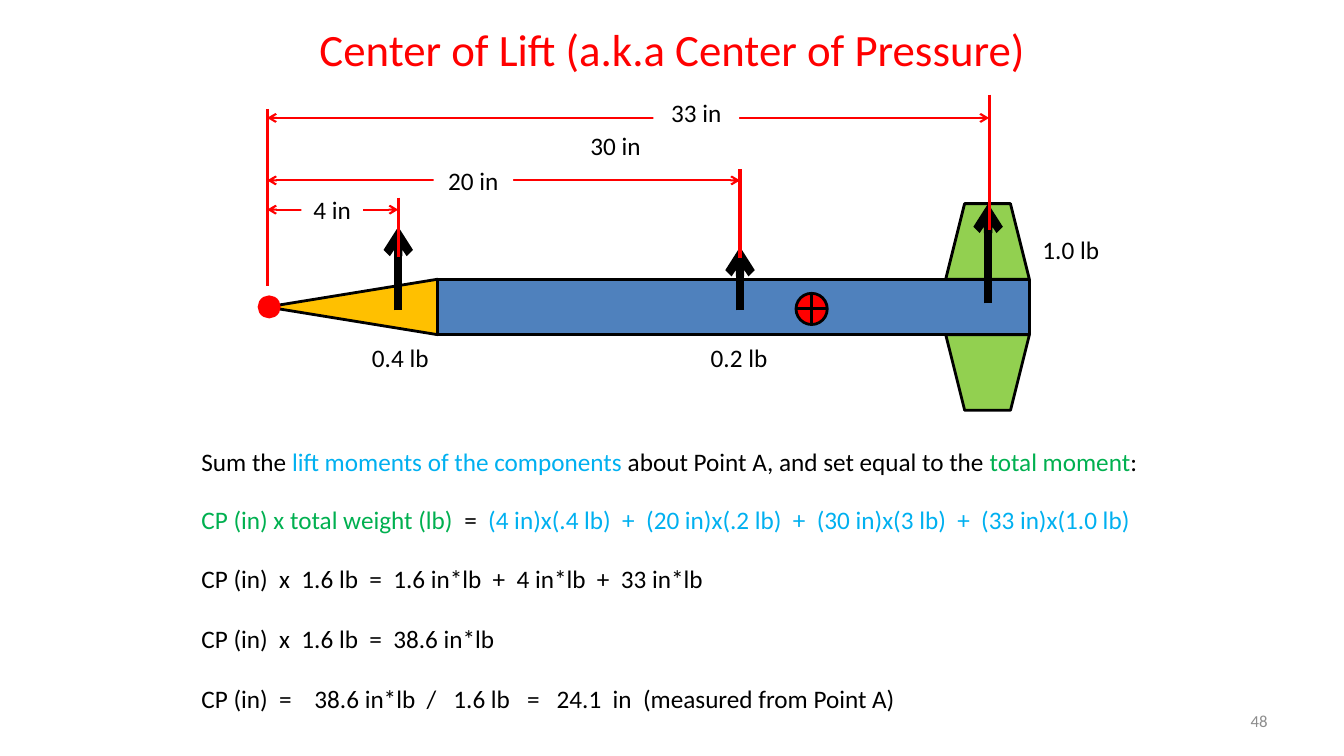
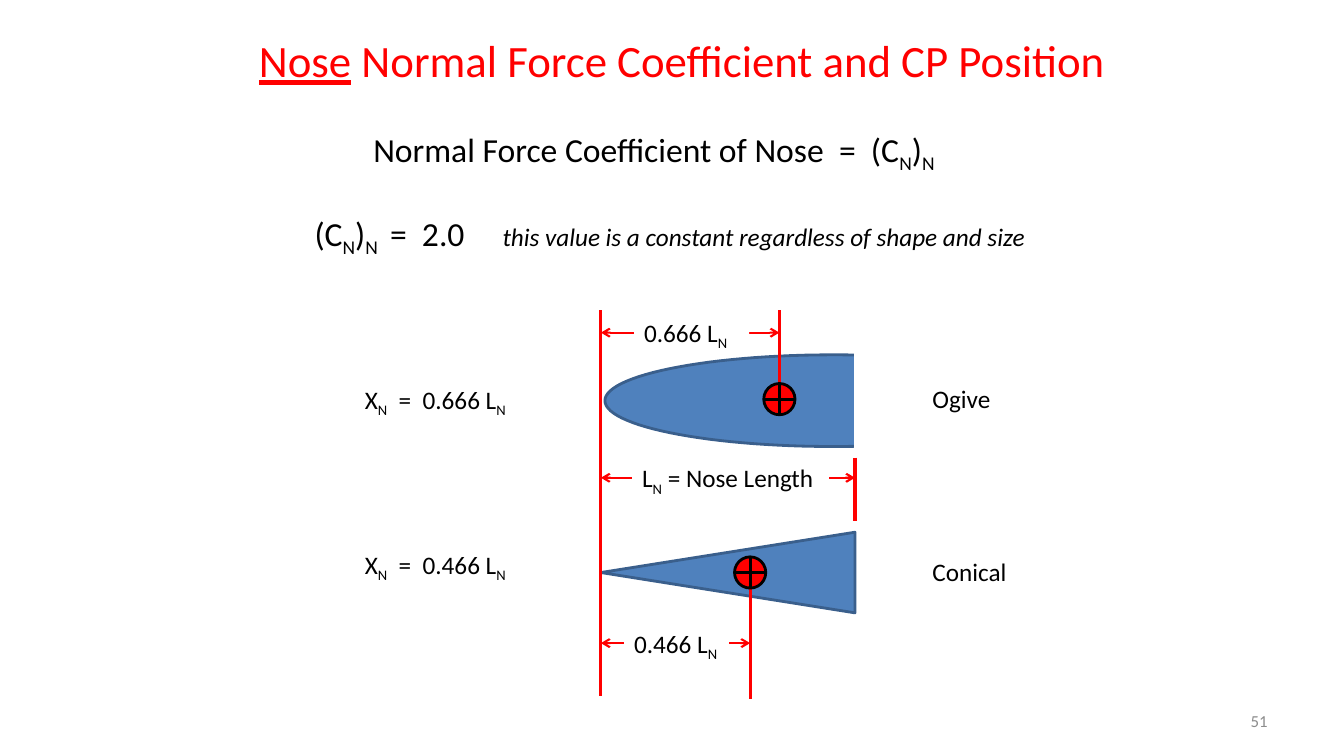
from math import acos, cos, pi, sin

from lxml.etree import SubElement
from pptx import Presentation
from pptx.dml.color import RGBColor
from pptx.enum.shapes import MSO_CONNECTOR, MSO_SHAPE
from pptx.enum.text import MSO_ANCHOR, PP_ALIGN
from pptx.oxml.ns import qn
from pptx.util import Inches, Pt

FONT = "Calibri"
BLACK, WHITE, RED, GRAY = "000000", "FFFFFF", "FF0000", "8C8C8C"
BLUE, BLUE_EDGE, ORANGE, LIME = "4F81BD", "3A5F8C", "FFC000", "92D050"
SKY, GREEN = "00B0F0", "00B050"
CENTER, LEFT, RIGHT = PP_ALIGN.CENTER, PP_ALIGN.LEFT, PP_ALIGN.RIGHT


def rgb(color):
    return RGBColor.from_string(color)


def inches(values):
    return [Inches(value) for value in values]


def paint(shape, fill, edge=None, weight=2):
    shape.shadow.inherit = False
    shape.fill.solid()
    shape.fill.fore_color.rgb = rgb(fill)
    if edge:
        shape.line.color.rgb = rgb(edge)
        shape.line.width = Pt(weight)
    else:
        shape.line.fill.background()


def add_shape(slide, kind, box, fill, edge=None, rotation=0):
    shape = slide.shapes.add_shape(kind, *inches(box))
    shape.rotation = rotation
    paint(shape, fill, edge)
    return shape


def add_run(paragraph, text, formats, subscript):
    run = paragraph.add_run()
    run.text = text
    values = {"name": FONT, "size": 18, "color": BLACK, **formats}
    run.font.color.rgb = rgb(values.pop("color"))
    values["size"] = Pt(values["size"])
    for name, value in values.items():
        setattr(run.font, name, value)
    if subscript:
        run._r.get_or_add_rPr().set("baseline", "-25000")


def write(shape, paragraphs, align=LEFT, anchor=MSO_ANCHOR.TOP, gap=0):
    frame = shape.text_frame
    frame.word_wrap = True
    frame.vertical_anchor = anchor
    for index, runs in enumerate(paragraphs):
        paragraph = frame.add_paragraph() if index else frame.paragraphs[0]
        paragraph.alignment = align
        paragraph.space_before = Pt(gap if index else 0)
        for text, formats in runs:
            for part, piece in enumerate(text.split("~")):
                if piece:
                    add_run(paragraph, piece, formats, part % 2 == 1)


def add_text(slide, box, paragraphs, **layout):
    write(slide.shapes.add_textbox(*inches(box)), paragraphs, **layout)


def add_label(slide, box, text, align=LEFT, **formats):
    add_text(slide, box, [[(text, formats)]], align=align)


def add_line(slide, start, end, color=RED, weight=2.25, arrows=()):
    line = slide.shapes.add_connector(
        MSO_CONNECTOR.STRAIGHT, *inches((*start, *end)))
    line.line.color.rgb = rgb(color)
    line.line.width = Pt(weight)
    properties = line._element.spPr
    for arrow in arrows:
        SubElement(properties.find(qn("a:ln")), qn(f"a:{arrow}"), type="arrow")
    SubElement(properties, qn("a:effectLst"))


def add_tag(slide, box, text, align):
    tag = add_shape(slide, MSO_SHAPE.RECTANGLE, box, WHITE)
    write(tag, [[(text, {})]], align=align)


def add_dimension(slide, left, right, y, text, tag_left, tag_width,
                  align=CENTER, lift=0.2):
    add_line(slide, (left, y), (right, y), weight=1.5,
             arrows=("headEnd", "tailEnd"))
    add_tag(slide, (tag_left, y - lift, tag_width, 0.4), text, align)


def add_cone(slide, left, top, length, height, fill, edge):
    shift = (length - height) / 2
    box = (left + shift, top - shift, height, length)
    add_shape(slide, MSO_SHAPE.ISOSCELES_TRIANGLE, box, fill, edge, rotation=270)


def add_ogive(slide, left, top, length, height):
    radius_x, radius_y = length * 0.917, height / 2
    first = acos(length / radius_x - 1)
    steps = 60
    angles = [first + (2 * pi - 2 * first) * step / steps
              for step in range(steps + 1)]
    points = [(Inches(left + radius_x * (1 + cos(angle))),
               Inches(top + radius_y * (1 - sin(angle)))) for angle in angles]
    builder = slide.shapes.build_freeform(*points[0])
    builder.add_line_segments(points[1:], close=False)
    paint(builder.convert_to_shape(), BLUE, BLUE_EDGE)


def add_pressure_mark(slide, x, y, size=0.31):
    box = (x - size / 2, y - size / 2, size, size)
    add_shape(slide, MSO_SHAPE.FLOWCHART_OR, box, RED, BLACK)


def new_slide(presentation, title_box, title, number):
    slide = presentation.slides.add_slide(presentation.slide_layouts[6])
    style = {"size": 32, "color": RED}
    runs = [(text, {**style, **formats}) for text, formats in title]
    add_text(slide, title_box, [runs], align=CENTER)
    add_text(slide, (9.56, 6.95, 3.11, 0.4),
             [[(number, {"size": 12, "color": GRAY})]],
             align=RIGHT, anchor=MSO_ANCHOR.MIDDLE)
    return slide


def rocket(slide, left, top, width, height):
    nose, body, fin_width, fin_height = 1.69, 0.55, 0.83, 0.75
    right, body_top = left + width, top + fin_height
    middle = body_top + body / 2
    add_cone(slide, left, body_top, nose, body, ORANGE, BLACK)
    add_shape(slide, MSO_SHAPE.RECTANGLE,
              (left + nose, body_top, width - nose, body), BLUE, BLACK)
    for fin_top, rotation in ((top, 0), (top + height - fin_height, 180)):
        add_shape(slide, MSO_SHAPE.TRAPEZOID,
                  (right - fin_width, fin_top, fin_width, fin_height),
                  LIME, BLACK, rotation)
    for offset, tail, tip in ((1.3, 1.06, 0.23), (4.69, 1.06, 0.43),
                              (7.15, 0.99, 0)):
        add_line(slide, (left + offset, top + tail), (left + offset, top + tip),
                 BLACK, 6, ("tailEnd",))
    add_shape(slide, MSO_SHAPE.OVAL, (left - 0.08, middle - 0.1, 0.2, 0.2),
              RED, RED)
    add_pressure_mark(slide, left + 5.4, middle + 0.02)
    for offset, drop, text in ((0.85, 1.33, "0.4 lb"), (4.21, 1.33, "0.2 lb"),
                               (7.5, 0.26, "1.0 lb")):
        add_label(slide, (left + offset, top + drop, 0.94, 0.4), text, CENTER)


def rocket_dimensions(slide, left, top):
    for offset, start, end in ((0, 0.14, 1.9), (1.3, 1.02, 1.61),
                               (4.69, 0.74, 1.62), (7.16, 0, 1.34)):
        add_line(slide, (left + offset, top + start), (left + offset, top + end))
    add_dimension(slide, left, left + 7.16, top + 0.23, "33 in",
                  left + 3.83, 0.85, lift=0.25)
    add_tag(slide, (left + 3.03, top + 0.3, 0.85, 0.4), "30 in", CENTER)
    add_dimension(slide, left, left + 4.69, top + 0.85, "20 in",
                  left + 1.65, 0.79)
    add_dimension(slide, left, left + 1.3, top + 1.14, "4 in",
                  left + 0.34, 0.61)


def moment_equations(slide, left, top, width):
    sky, green = {"color": SKY}, {"color": GREEN}
    add_text(slide, (left, top, width, 0.4), [[
        ("Sum the ", {}),
        ("lift moments of the components ", sky),
        ("about Point A, and set equal to the ", {}),
        ("total moment", green),
        (":", {})]])
    add_text(slide, (left, top + 0.57, width, 2.22), [
        [("CP (in) x total weight (lb)", green),
         ("  =  ", {}),
         ("(4 in)x(.4 lb)  +  (20 in)x(.2 lb)  +  (30 in)x(3 lb)  +  "
          "(33 in)x(1.0 lb)", sky)],
        [("CP (in)  x  1.6 lb  =  1.6 in*lb  +  4 in*lb  +  33 in*lb", {})],
        [("CP (in)  x  1.6 lb  =  38.6 in*lb", {})],
        [("CP (in)  =    38.6 in*lb  /   1.6 lb   =   24.1  in  "
          "(measured from Point A)", {})]], gap=21)


def nose_formulas(slide, left, top):
    add_label(slide, (left, top, 8.94, 0.5),
              "Normal Force Coefficient of Nose  =  (C~N~)~N  ~", CENTER, size=24)
    add_text(slide, (left + 0.72, top + 0.83, 7.73, 0.5), [[
        ("(C~N~)~N ~ =  2.0     ", {"size": 24}),
        ("this value is a constant regardless of shape and size",
         {"italic": True})]], align=CENTER)


def nose_diagram(slide, left, top, length):
    right, ogive_cp, cone_cp = left + length, left + 1.77, left + 1.48
    add_ogive(slide, left + 0.04, top + 0.44, length - 0.05, 0.91)
    add_cone(slide, left, top + 2.2, length, 0.8, BLUE, BLUE_EDGE)
    for x, start, end in ((left, 0, 3.82), (ogive_cp, 0, 0.75),
                          (right, 1.46, 2.09), (cone_cp, 2.6, 3.85)):
        add_line(slide, (x, top + start), (x, top + end))
    for end, drop, text, offset, width in (
            (ogive_cp, 0.22, "0.666 L~N~", 0.33, 1.14),
            (right, 1.66, "L~N~ = Nose Length", 0.31, 1.95),
            (cone_cp, 3.3, "0.466 L~N~", 0.23, 1.04)):
        add_dimension(slide, left, end, top + drop, text, left + offset, width,
                      align=LEFT)
    add_pressure_mark(slide, ogive_cp, top + 0.88)
    add_pressure_mark(slide, cone_cp, top + 2.6)
    for name, name_top, factor, factor_top in (
            ("Ogive", 0.67, "0.666", 0.68), ("Conical", 2.39, "0.466", 2.32)):
        add_label(slide, (right + 0.67, top + name_top, 1.5, 0.4), name)
        add_label(slide, (left - 2.44, top + factor_top, 1.77, 0.4),
                  f"X~N~  =  {factor} L~N~")


def main():
    presentation = Presentation()
    presentation.slide_width, presentation.slide_height = inches((13.33, 7.5))

    lift = new_slide(presentation, (2.17, 0.17, 9, 0.67),
                     [("Center of Lift (a.k.a Center of Pressure)", {})], "48")
    rocket(lift, 2.65, 2.02, 7.56, 2.05)
    rocket_dimensions(lift, 2.65, 0.94)
    moment_equations(lift, 1.9, 4.38, 9.6)

    nose = new_slide(presentation, (2.41, 0.28, 8.71, 0.64),
                     [("Nose", {"underline": True}),
                      (" Normal Force Coefficient and CP Position", {})], "51")
    nose_formulas(nose, 2.06, 1.23)
    nose_diagram(nose, 5.96, 3.08, 2.52)

    presentation.save("out.pptx")


if __name__ == "__main__":
    main()
